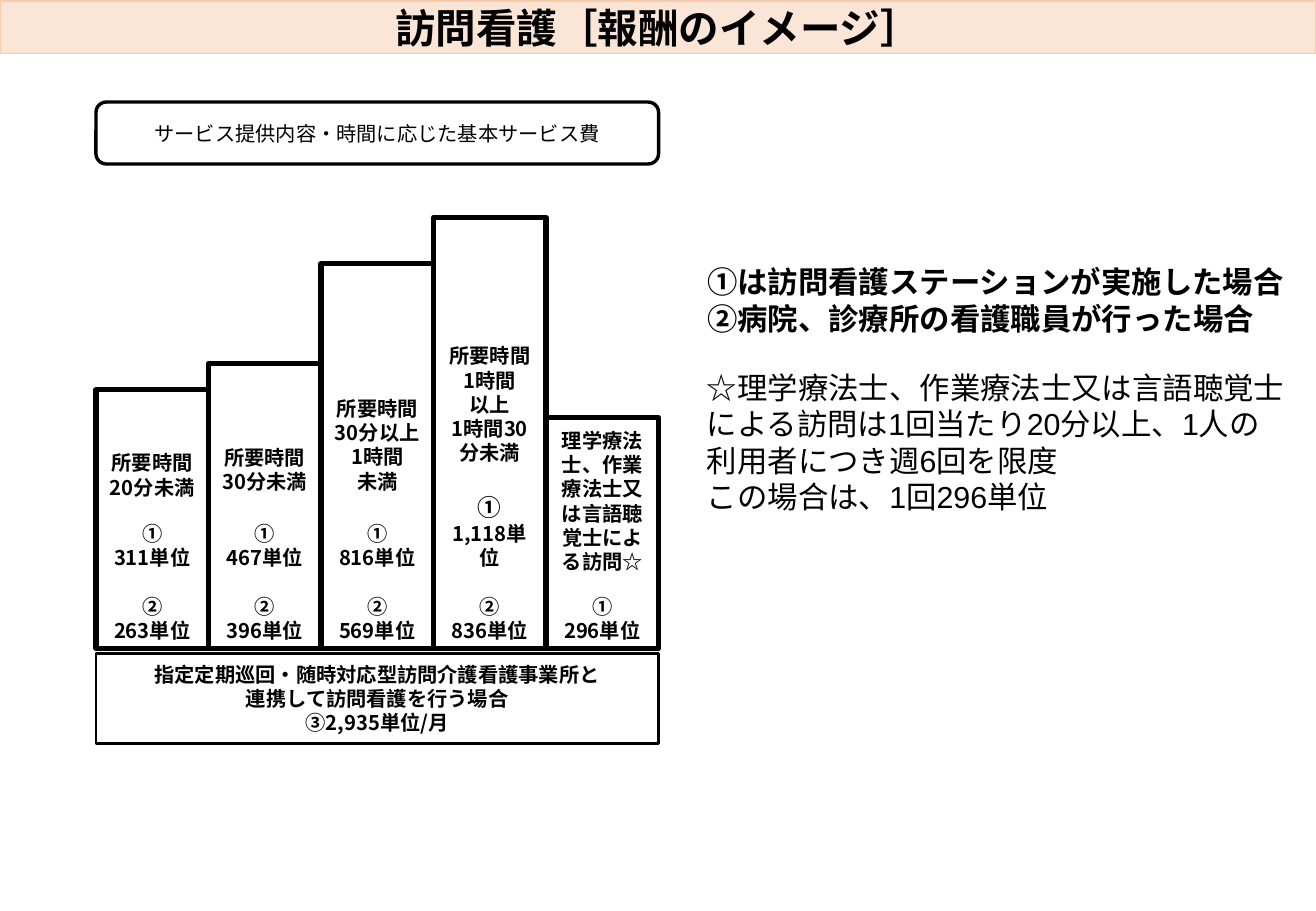
from dataclasses import dataclass

from lxml.etree import SubElement
from pptx import Presentation
from pptx.dml.color import RGBColor
from pptx.enum.shapes import MSO_SHAPE
from pptx.enum.text import MSO_ANCHOR, PP_ALIGN
from pptx.oxml.ns import qn
from pptx.util import Inches, Pt


@dataclass(frozen=True)
class Theme:
    ink: RGBColor = RGBColor(0, 0, 0)
    paper: RGBColor = RGBColor(255, 255, 255)
    band: RGBColor = RGBColor(0xFB, 0xE5, 0xD6)
    band_line: RGBColor = RGBColor(0xF8, 0xCB, 0xAD)
    font: str = "Noto Sans CJK JP"
    note_font: str = "Arial"
    title: int = 24
    note: int = 18
    mark: int = 14
    body: int = 12


THEME = Theme()

BAR_LEFT, BAR_WIDTH, BAR_BOTTOM = 0.79, 0.926, 5.34
CHART_WIDTH = 5 * BAR_WIDTH
PRICE_GAP = 14.4

# top, label lines, gap below label, size of first mark, prices
BARS = [
    (3.21, ["所要時間", "20分未満"], 13, THEME.body, ["311単位", "263単位"]),
    (2.99, ["所要時間", "30分未満"], 16.5, THEME.body, ["467単位", "396単位"]),
    (2.17, ["所要時間", "30分以上", "1時間", "未満"], 16.5, THEME.body,
     ["816単位", "569単位"]),
    (1.79, ["所要時間", "1時間", "以上", "1時間30分未満"], 16.5, THEME.mark,
     ["1,118単位", "836単位"]),
    (3.44, ["理学療法士、作業療法士又は言語聴覚士による訪問☆"], 12, THEME.body,
     ["296単位"]),
]


def add_run(p, text, size, bold=False, font=THEME.font):
    r = p.add_run()
    r.text = text
    r.font.name = font
    r.font.size = Pt(size)
    r.font.bold = bold
    r.font.color.rgb = THEME.ink
    if font == THEME.font:
        SubElement(r.font._element, qn("a:ea"), typeface=font)


def add_lines(tf, lines, bold=False, font=THEME.font, align=PP_ALIGN.CENTER,
              anchor=MSO_ANCHOR.MIDDLE):
    tf.word_wrap = True
    tf.vertical_anchor = anchor
    for i, (text, size, gap) in enumerate(lines):
        p = tf.add_paragraph() if i else tf.paragraphs[0]
        p.alignment = align
        p.space_before = Pt(gap)
        add_run(p, text, size, bold, font)


def paint(sp, fill, line, width):
    sp.fill.solid()
    sp.fill.fore_color.rgb = fill
    sp.line.color.rgb = line
    sp.line.width = Pt(width)


def add_title(s, text):
    sp = s.shapes.title
    sp.left, sp.top = Inches(0), Inches(0.01)
    sp.width, sp.height = Inches(10.83), Inches(0.43)
    paint(sp, THEME.band, THEME.band_line, 1)
    add_lines(sp.text_frame, [(text, THEME.title, 0)], bold=True)


def add_box(s, kind, left, top, width, height, line_width, lines, **style):
    sp = s.shapes.add_shape(kind, Inches(left), Inches(top),
                            Inches(width), Inches(height))
    sp.shadow.inherit = False
    paint(sp, THEME.paper, THEME.ink, line_width)
    add_lines(sp.text_frame, lines, **style)


def add_bar(s, index, top, label, gap, mark_size, prices):
    lines = [(text, THEME.body, 0) for text in label]
    marks = zip("①②", (mark_size, THEME.body), (gap, PRICE_GAP), prices)
    for mark, size, space, price in marks:
        lines += [(mark, size, space), (price, THEME.body, 0)]
    add_box(s, MSO_SHAPE.RECTANGLE, BAR_LEFT + index * BAR_WIDTH, top,
            BAR_WIDTH, BAR_BOTTOM - top, 3, lines,
            bold=True, anchor=MSO_ANCHOR.BOTTOM)


def add_note(s, top, width, height, texts, **style):
    sp = s.shapes.add_textbox(Inches(5.72), Inches(top),
                              Inches(width), Inches(height))
    add_lines(sp.text_frame, [(text, THEME.note, 0) for text in texts],
              align=PP_ALIGN.LEFT, anchor=MSO_ANCHOR.TOP, **style)


def main():
    prs = Presentation()
    prs.slide_width, prs.slide_height = Inches(10.83), Inches(7.5)
    s = prs.slides.add_slide(prs.slide_layouts[5])

    add_title(s, "訪問看護［報酬のイメージ］")
    add_box(s, MSO_SHAPE.ROUNDED_RECTANGLE, BAR_LEFT, 0.84, CHART_WIDTH, 0.51, 2,
            [("サービス提供内容・時間に応じた基本サービス費", THEME.body, 0)])
    cooperation = ["指定定期巡回・随時対応型訪問介護看護事業所と",
                   "連携して訪問看護を行う場合", "③2,935単位/月"]
    add_box(s, MSO_SHAPE.RECTANGLE, BAR_LEFT, 5.38, CHART_WIDTH, 0.74, 1.5,
            [(text, THEME.body, 0) for text in cooperation], bold=True)
    for i, bar in enumerate(BARS):
        add_bar(s, i, *bar)
    add_note(s, 2.99, 4.96, 1.31,
             ["☆理学療法士、作業療法士又は言語聴覚士による訪問は1回当たり20分以上、"
              "1人の利用者につき週6回を限度", "この場合は、1回296単位"],
             font=THEME.note_font)
    add_note(s, 2.12, 5.11, 0.71,
             ["①は訪問看護ステーションが実施した場合",
              "②病院、診療所の看護職員が行った場合"], bold=True)

    prs.save("out.pptx")


if __name__ == "__main__":
    main()
